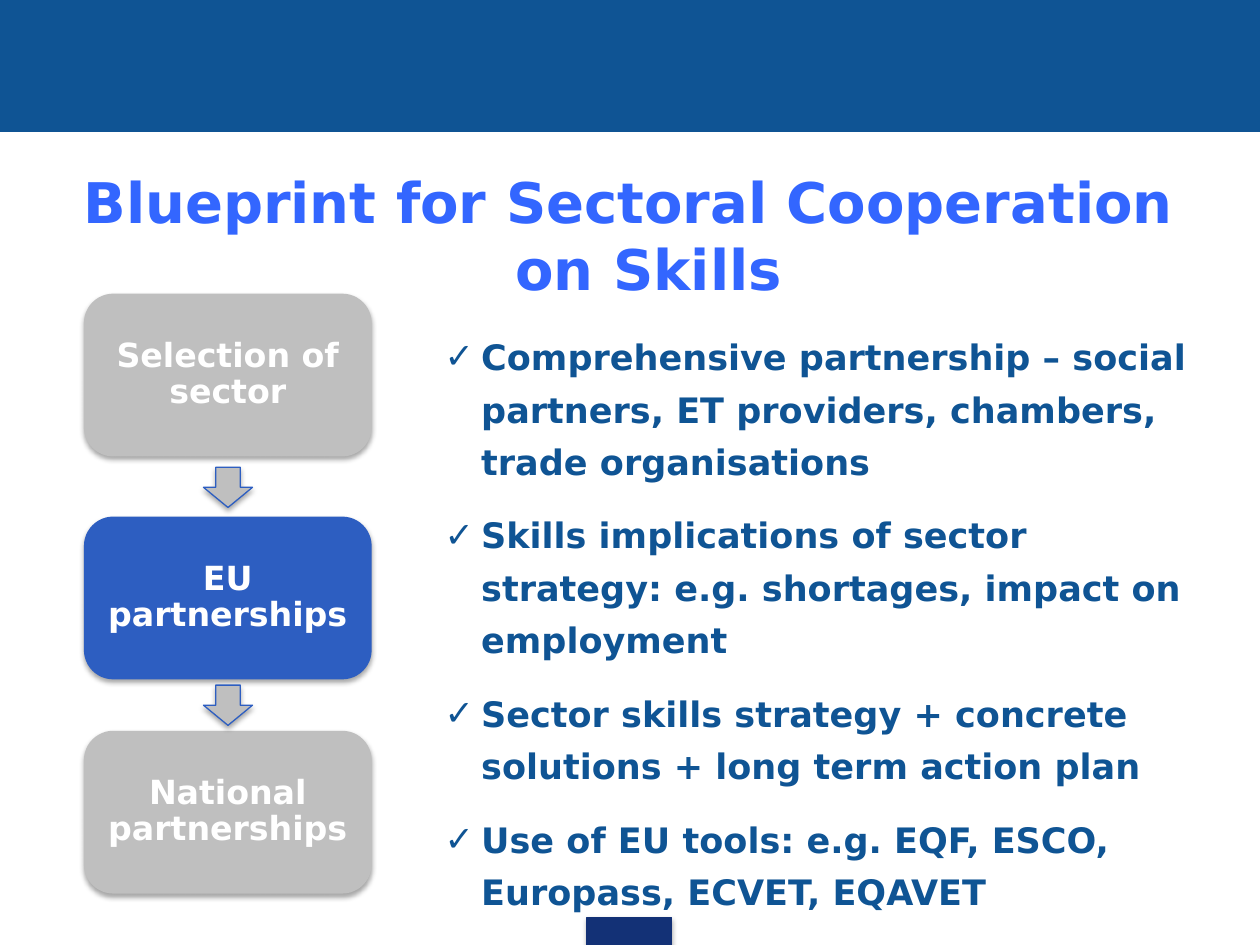
from lxml.etree import SubElement
from pptx import Presentation
from pptx.dml.color import RGBColor
from pptx.enum.shapes import MSO_SHAPE
from pptx.enum.text import MSO_ANCHOR, MSO_AUTO_SIZE, PP_ALIGN
from pptx.oxml.ns import qn
from pptx.util import Pt

FONT = "DejaVu Sans"
WHITE = RGBColor(0xFF, 0xFF, 0xFF)
BLACK = RGBColor(0x00, 0x00, 0x00)
BAND_BLUE = RGBColor(0x0F, 0x54, 0x94)
NAVY = RGBColor(0x13, 0x31, 0x76)
GREY = RGBColor(0xBF, 0xBF, 0xBF)
STEP_BLUE = RGBColor(0x2D, 0x5E, 0xC1)
TITLE_BLUE = RGBColor(0x33, 0x66, 0xFF)

STEPS = [
    ("Selection of sector", 167.8, GREY),
    ("EU partnerships", 295.2, STEP_BLUE),
    ("National partnerships", 417.6, GREY),
]
ARROW_TOPS = [267, 391.5]
POINTS = [
    "Comprehensive partnership – social partners, ET providers, chambers, trade organisations",
    "Skills implications of sector strategy: e.g. shortages, impact on employment",
    "Sector skills strategy + concrete solutions + long term action plan",
    "Use of EU tools: e.g. EQF, ESCO, Europass, ECVET, EQAVET",
]


def style_text(para, size, color):
    para.font.name = FONT
    para.font.size = Pt(size)
    para.font.bold = True
    para.font.color.rgb = color


def set_hanging_indent(para, indent):
    properties = para._p.get_or_add_pPr()
    properties.set("marL", str(Pt(indent)))
    properties.set("indent", str(Pt(-indent)))
    return properties


def add_soft_shadow(shape):
    effects = shape._element.spPr.find(qn("a:effectLst"))
    shadow = SubElement(effects, qn("a:outerShdw"), blurRad=str(Pt(3.1)),
                        dist=str(Pt(1.8)), dir="5400000", rotWithShape="0")
    color = SubElement(shadow, qn("a:srgbClr"), val=str(BLACK))
    SubElement(color, qn("a:alpha"), val="35000")


def add_filled_shape(page, kind, bounds, fill, line=None, shadow=True):
    shape = page.shapes.add_shape(kind, *map(Pt, bounds))
    shape.shadow.inherit = False
    shape.fill.solid()
    shape.fill.fore_color.rgb = fill
    if line is None:
        shape.line.fill.background()
    else:
        shape.line.color.rgb = line
        shape.line.width = Pt(0.75)
    if shadow:
        add_soft_shadow(shape)
    return shape


def add_step(page, label, top, fill):
    box = add_filled_shape(page, MSO_SHAPE.ROUNDED_RECTANGLE, (48, top, 164.4, 93), fill)
    box.adjustments[0] = 0.18
    frame = box.text_frame
    frame.word_wrap = True
    frame.vertical_anchor = MSO_ANCHOR.MIDDLE
    frame.margin_left = frame.margin_right = Pt(5)
    frame.margin_top = frame.margin_bottom = Pt(5)
    para = frame.paragraphs[0]
    para.text = label
    para.alignment = PP_ALIGN.CENTER
    para.line_spacing = 0.9
    style_text(para, 19, WHITE)


def set_title(page, text):
    title = page.shapes.title
    title.left, title.top, title.width, title.height = map(Pt, (35.3, 100, 648, 67.7))
    frame = title.text_frame
    frame.auto_size = MSO_AUTO_SIZE.NONE
    frame.word_wrap = True
    frame.vertical_anchor = MSO_ANCHOR.MIDDLE
    para = frame.paragraphs[0]
    para.text = text
    para.alignment = PP_ALIGN.CENTER
    set_hanging_indent(para, 23)
    style_text(para, 32, TITLE_BLUE)


def add_checklist(page, points):
    box = page.shapes.add_textbox(*map(Pt, (247, 182.2, 453.6, 346.3)))
    frame = box.text_frame
    frame.word_wrap = True
    for index, point in enumerate(points):
        para = frame.add_paragraph() if index else frame.paragraphs[0]
        para.text = point
        para.line_spacing = 1.25
        para.space_after = Pt(12)
        properties = set_hanging_indent(para, 20.9)
        SubElement(properties, qn("a:buFont"), typeface=FONT)
        SubElement(properties, qn("a:buChar"), char="✓")
        style_text(para, 20, BAND_BLUE)


def main():
    deck = Presentation()
    deck.slide_width, deck.slide_height = Pt(720), Pt(540)
    page = deck.slides.add_slide(deck.slide_layouts[5])
    add_filled_shape(page, MSO_SHAPE.RECTANGLE, (0, 0, 720, 75.3),
                     BAND_BLUE, BAND_BLUE, shadow=False)
    add_filled_shape(page, MSO_SHAPE.RECTANGLE, (335.5, 524.3, 48.3, 15.7), NAVY, NAVY)
    for label, top, fill in STEPS:
        add_step(page, label, top, fill)
    for top in ARROW_TOPS:
        add_filled_shape(page, MSO_SHAPE.DOWN_ARROW, (116.3, top, 28, 23), GREY, STEP_BLUE)
    set_title(page, "Blueprint for Sectoral Cooperation on Skills")
    add_checklist(page, POINTS)
    deck.save("out.pptx")


if __name__ == "__main__":
    main()
